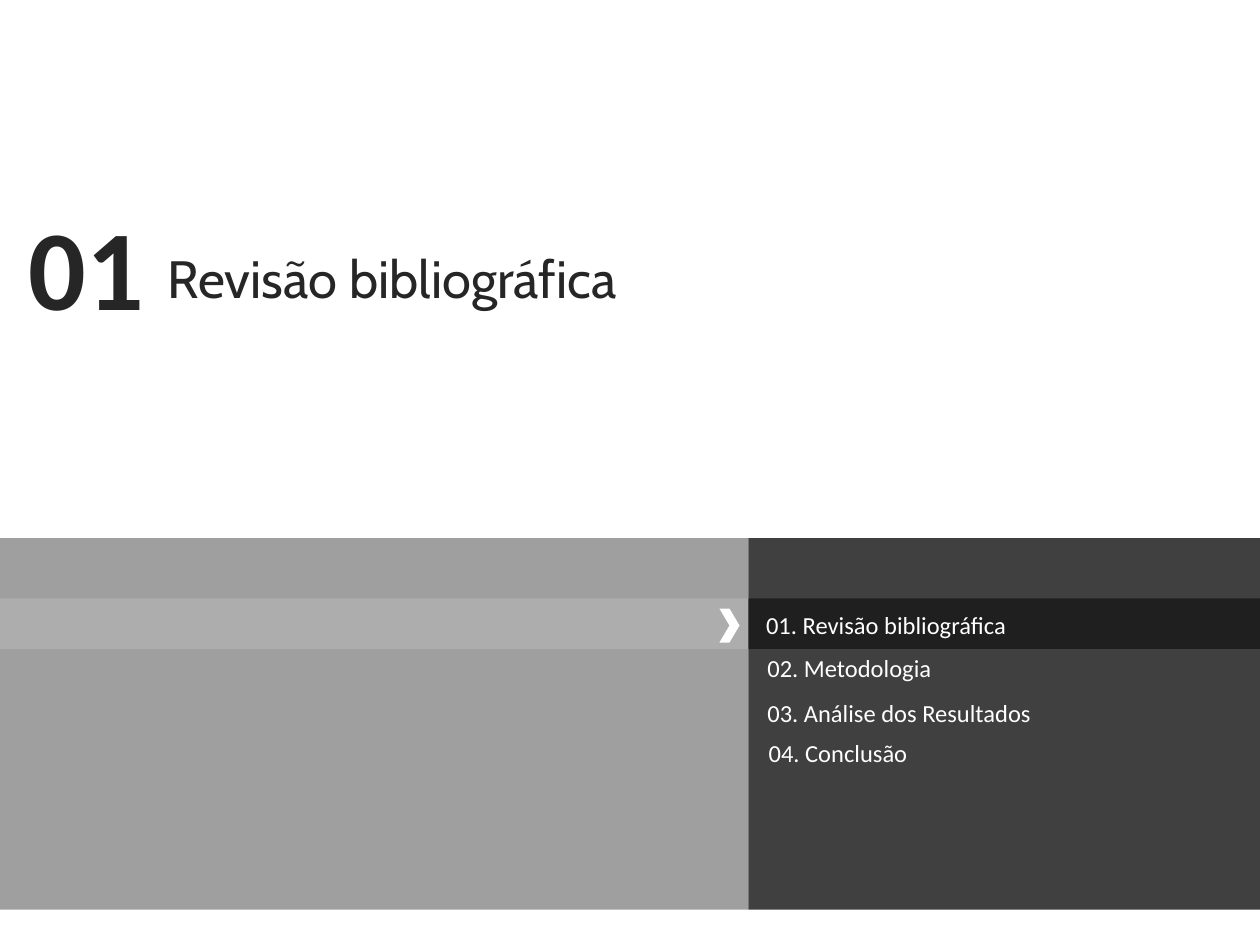
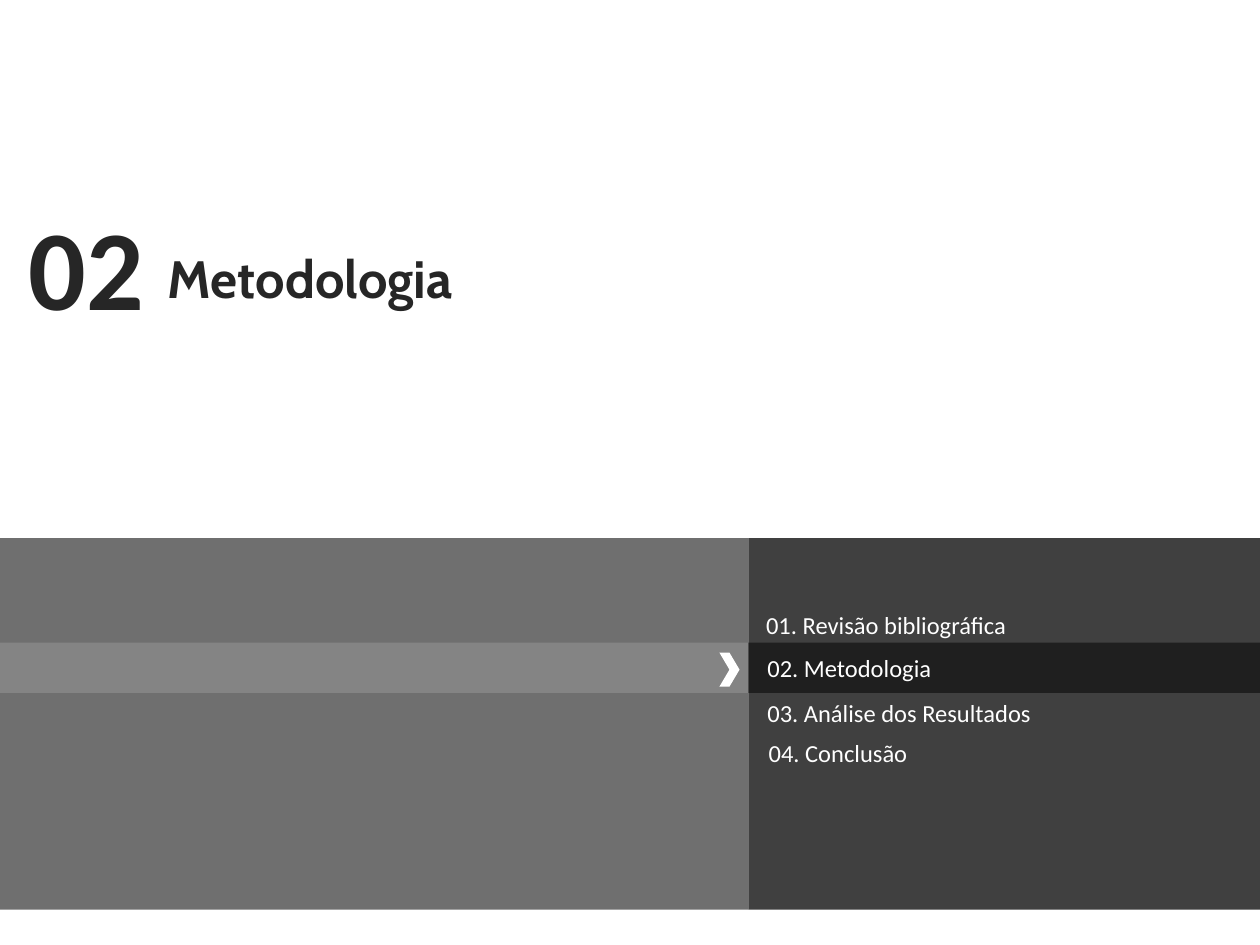
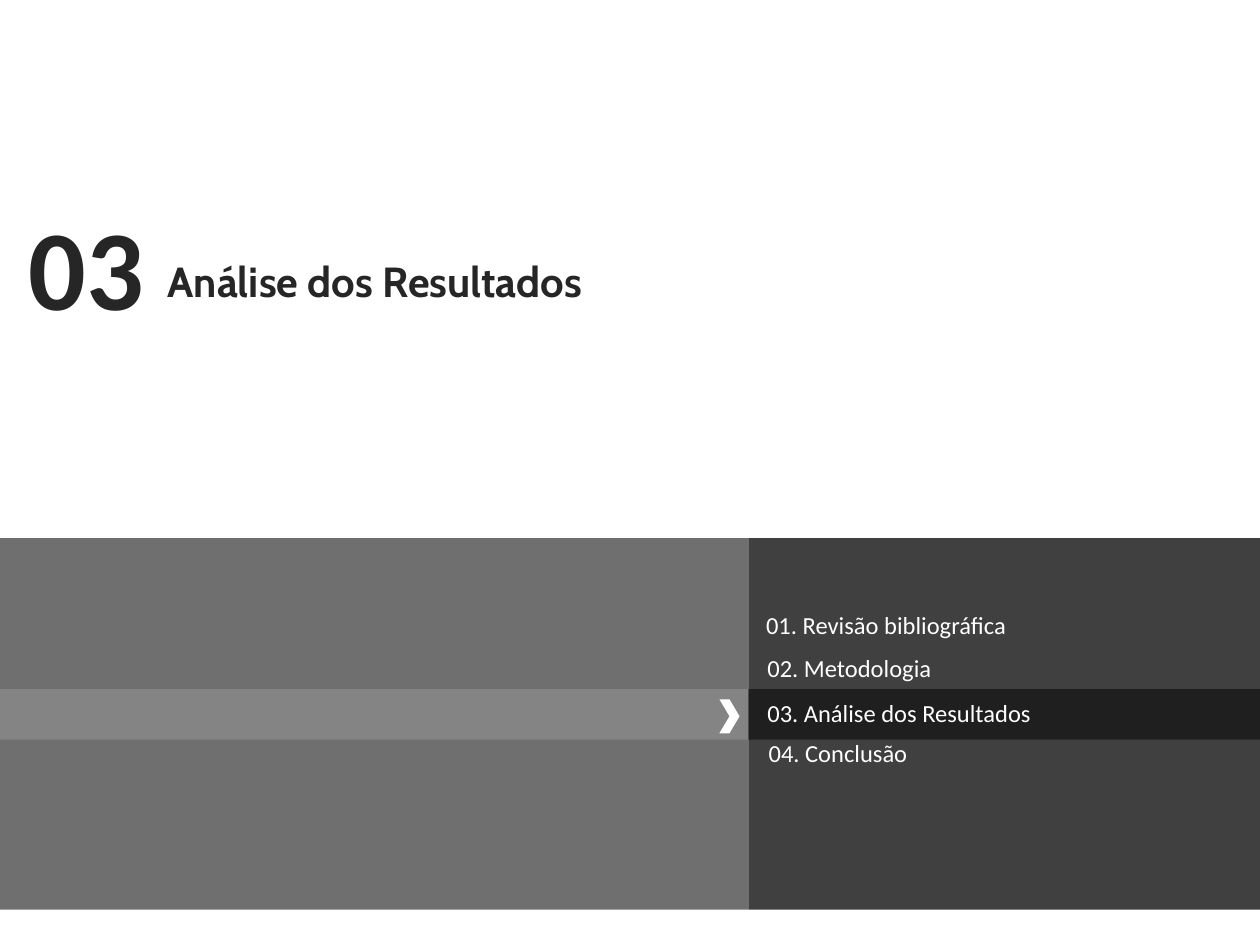
from typing import NamedTuple

from lxml import etree
from pptx import Presentation
from pptx.dml.color import RGBColor
from pptx.enum.shapes import MSO_SHAPE
from pptx.enum.text import MSO_ANCHOR, MSO_AUTO_SIZE, PP_ALIGN
from pptx.oxml.ns import qn
from pptx.util import Inches, Pt

RECT, CHEVRON = MSO_SHAPE.RECTANGLE, MSO_SHAPE.CHEVRON
TOP, LEFT, FIXED = MSO_ANCHOR.TOP, PP_ALIGN.LEFT, MSO_AUTO_SIZE.NONE

WHITE = RGBColor(0xFF, 0xFF, 0xFF)
BLACK = RGBColor(0x00, 0x00, 0x00)
INK = RGBColor(0x26, 0x26, 0x26)
DARK = RGBColor(0x40, 0x40, 0x40)
GRAY = RGBColor(0x80, 0x80, 0x80)

BODY, HEAD = "Calibri", "Cabin"

# The slide is a grid of 1000 columns by 750 rows
WIDTH, HEIGHT = Inches(10), Inches(7.5)
COL, ROW = WIDTH / 1000, HEIGHT / 750


class Box(NamedTuple):
    x: float
    y: float
    w: float
    h: float

    def inner(self, x, y, w, h):
        """Return a box whose corner is measured from this one's."""
        return Box(self.x + x, self.y + y, w, h)

    def frame(self):
        return (round(self.x * COL), round(self.y * ROW),
                round(self.w * COL), round(self.h * ROW))


HEADING = Box(23, 156, 936, 102)
PANEL = Box(0, 427, 594, 295)
MENU = Box(594, 427, 406, 295)
BAND = 40

# Menu entry: label, column and row of its text within the menu
ITEMS = [
    ("01. Revisão bibliográfica", 14, 57),
    ("02. Metodologia", 15, 91),
    ("03. Análise dos Resultados", 15, 127),
    ("04. Conclusão", 16, 159),
]

# Section: number, name, size, bold, title row, panel colour, band row
SECTIONS = [
    ("01", "Revisão bibliográfica", 30, False, 39, GRAY, 48),
    ("02", "Metodologia", 30, True, 39, DARK, 83),
    ("03", "Análise dos Resultados", 24, True, 47, DARK, 120),
]


def draw(slide, kind, box, color, alpha=100):
    shape = slide.shapes.add_shape(kind, *box.frame())
    shape.shadow.inherit = False
    shape.line.fill.background()
    shape.fill.solid()
    shape.fill.fore_color.rgb = color
    if alpha < 100:
        tint = shape.element.spPr.find(".//" + qn("a:srgbClr"))
        etree.SubElement(tint, qn("a:alpha"), val=str(alpha * 1000))


def fill_text(shape, text, size, font, color, bold=False):
    frame = shape.text_frame
    frame.text = text
    frame.word_wrap = True
    frame.auto_size = FIXED
    frame.vertical_anchor = TOP
    frame.margin_left = frame.margin_right = 0
    frame.margin_top = frame.margin_bottom = 0
    para = frame.paragraphs[0]
    para.alignment = LEFT
    para.font.size = Pt(size)
    para.font.name = font
    para.font.bold = bold
    para.font.color.rgb = color


def write(slide, box, *style):
    fill_text(slide.shapes.add_textbox(*box.frame()), *style)


def add_heading(slide, box, number, name, size, bold, row):
    write(slide, box.inner(0, 0, 111, 94), number, 65, BODY, INK, True)
    title = slide.shapes.title
    place = box.inner(110, row, 826, 47)
    title.left, title.top, title.width, title.height = place.frame()
    fill_text(title, name, size, HEAD, INK, bold)


def add_panel(slide, box, color, row):
    draw(slide, RECT, box, color, 75)
    draw(slide, RECT, box.inner(0, row, box.w, BAND), WHITE, 15)
    draw(slide, CHEVRON, box.inner(box.w - 23, row + 8, 16, 27), WHITE)


def add_menu(slide, box, row):
    draw(slide, RECT, box, DARK)
    draw(slide, RECT, box.inner(0, row, box.w, BAND), BLACK, 50)
    for label, x, y in ITEMS:
        write(slide, box.inner(x, y, 328, 24), label, 14, BODY, WHITE)


def add_section(deck, number, name, size, bold, title_row, color, band_row):
    slide = deck.slides.add_slide(deck.slide_layouts[5])  # title only
    add_heading(slide, HEADING, number, name, size, bold, title_row)
    add_panel(slide, PANEL, color, band_row)
    add_menu(slide, MENU, band_row)


def main():
    deck = Presentation()
    deck.slide_width, deck.slide_height = WIDTH, HEIGHT
    for section in SECTIONS:
        add_section(deck, *section)
    deck.save("out.pptx")


if __name__ == "__main__":
    main()
